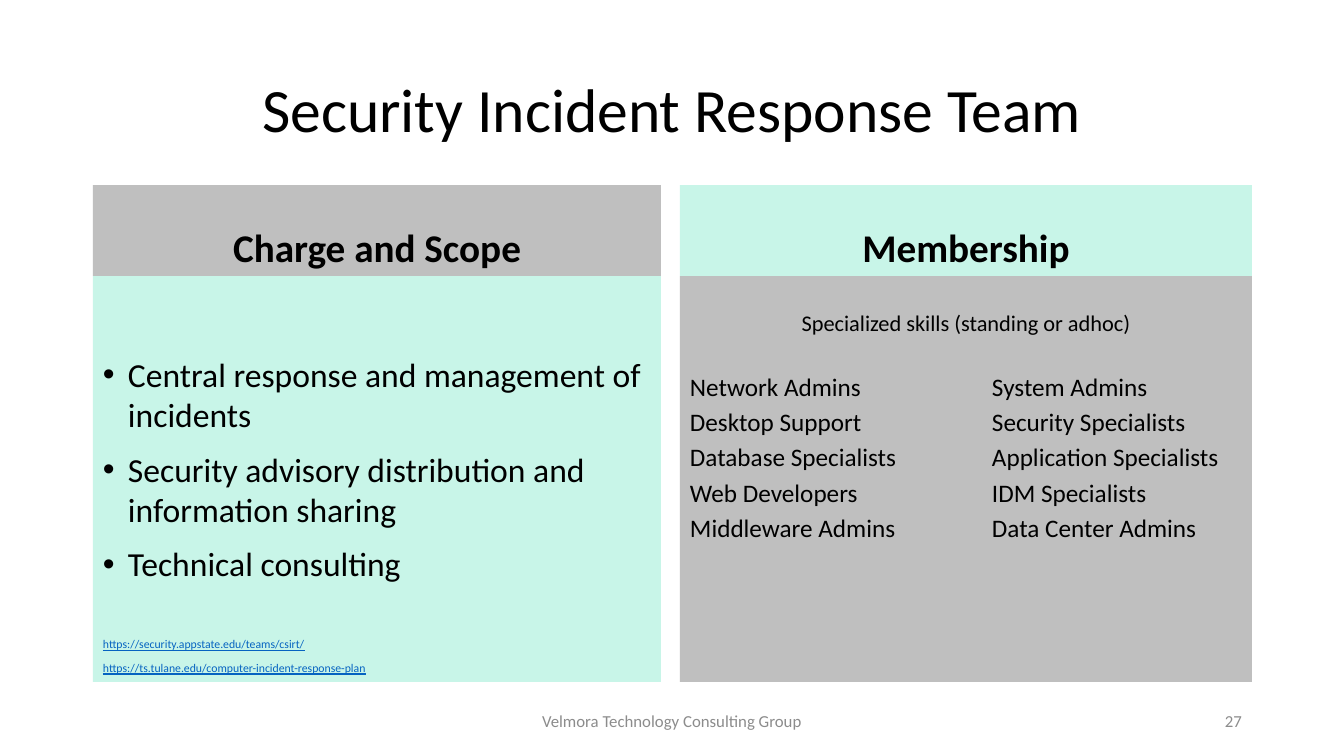
from pptx import Presentation
from pptx.dml.color import RGBColor
from pptx.enum.shapes import MSO_SHAPE
from pptx.enum.text import MSO_ANCHOR, PP_ALIGN
from pptx.oxml.ns import qn
from pptx.util import Pt
from lxml import etree

RECTANGLE = MSO_SHAPE.RECTANGLE
TOP, MIDDLE, BOTTOM = MSO_ANCHOR.TOP, MSO_ANCHOR.MIDDLE, MSO_ANCHOR.BOTTOM
LEFT, CENTER, RIGHT = PP_ALIGN.LEFT, PP_ALIGN.CENTER, PP_ALIGN.RIGHT

FONT = "Calibri"
COLORS = {
    "text": "000000",
    "gray": "BFBFBF",
    "mint": "C8F5E8",
    "link": "0563C1",
    "footer": "8C8C8C",
}
EMU_PER_PX = 914400 / 100.8
SLIDE_WIDTH, SLIDE_HEIGHT = 1344, 756
HEADER_TOP, HEADER_HEIGHT = 185, 91
PANEL_TOP, PANEL_HEIGHT = HEADER_TOP + HEADER_HEIGHT, 406
FOOTER_TOP, FOOTER_HEIGHT = 701, 40
BULLET_INDENT = 25
SECOND_COLUMN = 302

DUTIES = [
    "Central response and management of incidents",
    "Security advisory distribution and information sharing",
    "Technical consulting",
]
LINKS = [
    "https://security.appstate.edu/teams/csirt/",
    "https://ts.tulane.edu/computer-incident-response-plan",
]
MEMBERS = [
    ("Network Admins", "System Admins"),
    ("Desktop Support", "Security Specialists"),
    ("Database Specialists", "Application Specialists"),
    ("Web Developers", "IDM Specialists"),
    ("Middleware Admins", "Data Center Admins"),
]


def px(length):
    return round(length * EMU_PER_PX)


def add_box(slide, left, top, width, height, fill=None, anchor=MIDDLE, inset_top=5):
    bounds = [px(length) for length in (left, top, width, height)]
    if fill:
        shape = slide.shapes.add_shape(RECTANGLE, *bounds)
        shape.shadow.inherit = False
        shape.fill.solid()
        shape.fill.fore_color.rgb = RGBColor.from_string(COLORS[fill])
        shape.line.fill.background()
    else:
        shape = slide.shapes.add_textbox(*bounds)
    frame = shape.text_frame
    frame.word_wrap = True
    frame.vertical_anchor = anchor
    frame.margin_left = frame.margin_right = px(10)
    frame.margin_top, frame.margin_bottom = px(inset_top), px(5)
    return frame


def add_text(frame, text, size, color="text", bold=False, underline=False,
             align=LEFT, line_spacing=1.0, before=0, bullet=False, tab=None):
    paragraph = frame.paragraphs[0]
    if paragraph.runs:
        paragraph = frame.add_paragraph()
    properties = paragraph._p.get_or_add_pPr()
    if bullet:
        properties.set("marL", str(px(BULLET_INDENT)))
        properties.set("indent", str(-px(BULLET_INDENT)))
        etree.SubElement(properties, qn("a:buFont"), typeface="Arial")
        etree.SubElement(properties, qn("a:buChar"), char="•")
    if tab:
        tabs = etree.SubElement(properties, qn("a:tabLst"))
        etree.SubElement(tabs, qn("a:tab"), pos=str(px(tab)), algn="l")
    paragraph.alignment = align
    paragraph.line_spacing = line_spacing
    paragraph.space_before = Pt(before)
    run = paragraph.add_run()
    run.text = text
    run.font.name = FONT
    run.font.size = Pt(size)
    run.font.bold = bold
    run.font.underline = underline
    run.font.color.rgb = RGBColor.from_string(COLORS[color])


def add_panel(slide, left, width, heading, header_fill, body_fill, inset_top):
    header = add_box(slide, left, HEADER_TOP, width, HEADER_HEIGHT, header_fill, BOTTOM)
    add_text(header, heading, 28, bold=True, align=CENTER, line_spacing=0.9)
    return add_box(slide, left, PANEL_TOP, width, PANEL_HEIGHT, body_fill, TOP, inset_top)


def add_footer(slide, left, width, text, align):
    frame = add_box(slide, left, FOOTER_TOP, width, FOOTER_HEIGHT)
    add_text(frame, text, 12, color="footer", align=align)


def main():
    presentation = Presentation()
    presentation.slide_width = px(SLIDE_WIDTH)
    presentation.slide_height = px(SLIDE_HEIGHT)
    slide = presentation.slides.add_slide(presentation.slide_layouts[6])

    title = add_box(slide, 93, 40, 1159, 146)
    add_text(title, "Security Incident Response Team", 44, align=CENTER, line_spacing=0.9)

    charge = add_panel(slide, 93, 568, "Charge and Scope", "gray", "mint", 78)
    for index, duty in enumerate(DUTIES):
        add_text(charge, duty, 24, before=10 if index else 0, bullet=True)
    for index, link in enumerate(LINKS):
        add_text(charge, link, 8.4, color="link", underline=True,
                 line_spacing=0.7, before=10 if index else 41)

    membership = add_panel(slide, 680, 572, "Membership", "mint", "gray", 40)
    add_text(membership, "Specialized skills (standing or adhoc)", 16,
             align=CENTER, line_spacing=0.7)
    for index, pair in enumerate(MEMBERS):
        add_text(membership, "\t".join(pair), 18, line_spacing=0.7,
                 before=10 if index else 32, tab=SECOND_COLUMN)

    add_footer(slide, 445, 454, "Velmora Technology Consulting Group", CENTER)
    add_footer(slide, 950, 302, "27", RIGHT)
    presentation.save("out.pptx")


if __name__ == "__main__":
    main()
